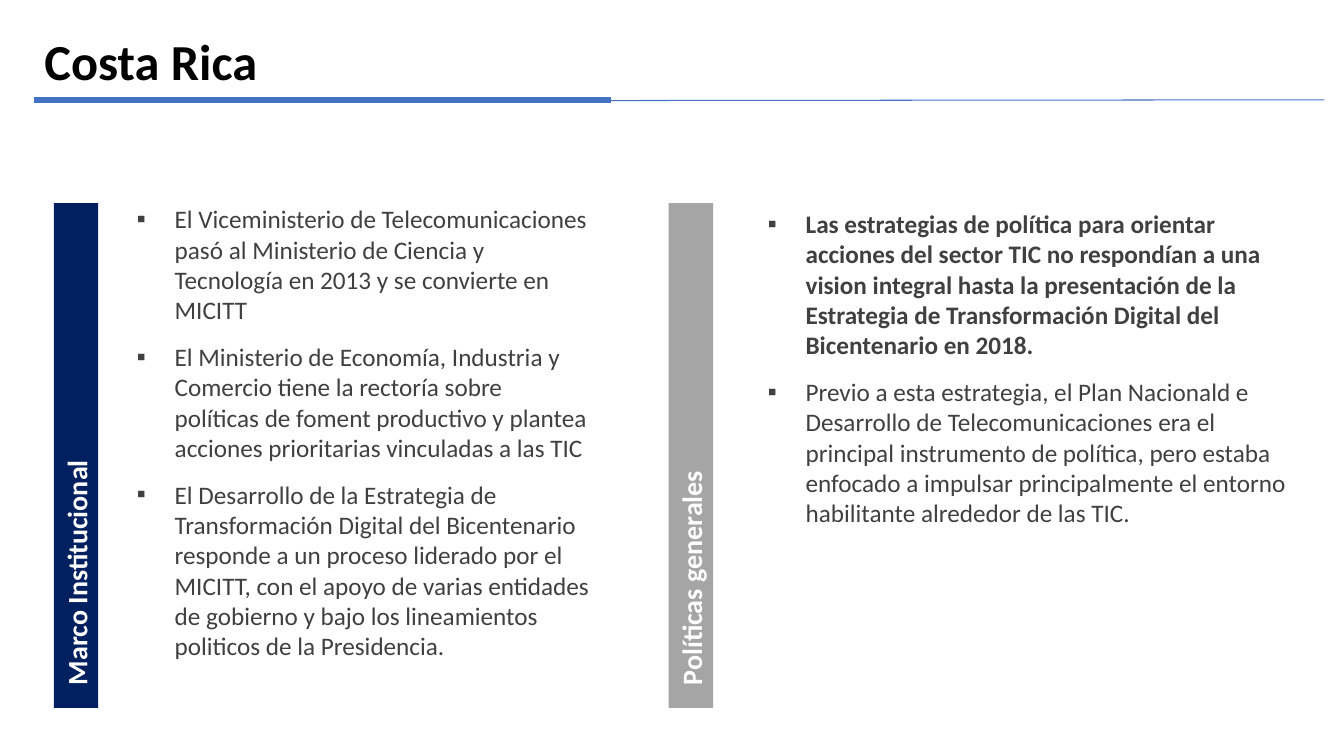
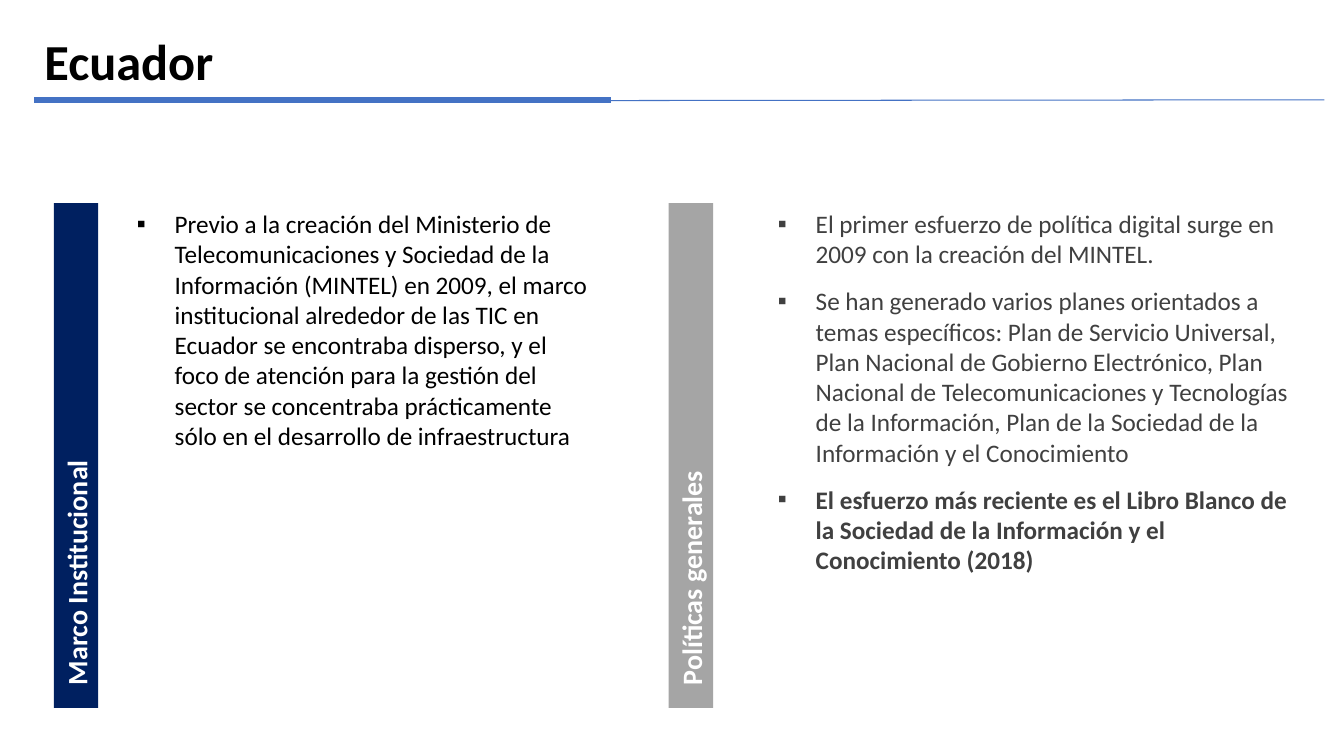
import pptx
import pptx.dml.color
import pptx.enum.shapes
import pptx.enum.text
import pptx.oxml
import pptx.oxml.ns
import pptx.util

Pt = pptx.util.Pt
RGBColor = pptx.dml.color.RGBColor
Anchor = pptx.enum.text.MSO_ANCHOR
Align = pptx.enum.text.PP_ALIGN

NAVY = RGBColor(0x00, 0x20, 0x60)
GREY = RGBColor(0xA5, 0xA5, 0xA5)
BLUE = RGBColor(0x44, 0x72, 0xC4)
DARK = RGBColor(0x40, 0x40, 0x40)
BLACK = RGBColor(0x00, 0x00, 0x00)
WHITE = RGBColor(0xFF, 0xFF, 0xFF)

TITLE_ONLY = 5


class CountryDeck:
    """Holds the shared style and the slide being filled."""

    font = "Calibri"
    title_format = {"size": Pt(36), "bold": True}
    label_format = {"size": Pt(20), "bold": True}
    body_format = {"size": Pt(18)}
    hanging = Pt(27)
    band_length, band_width, band_top = 360.7, 31.7, 145

    def __init__(self):
        self.deck = pptx.Presentation()
        self.deck.slide_width = Pt(960)
        self.deck.slide_height = Pt(540)
        self.slide = None

    def add_span(self, para, text, style, color):
        span = para.add_run()
        span.text = text
        span.font.name = self.font
        for name, value in style.items():
            setattr(span.font, name, value)
        span.font.color.rgb = color

    def add_line(self, start, end, weight):
        line = self.slide.shapes.add_connector(
            pptx.enum.shapes.MSO_CONNECTOR.STRAIGHT,
            *(Pt(value) for value in (*start, *end)))
        line.line.color.rgb = BLUE
        line.line.width = Pt(weight)
        line._element.spPr.append(pptx.oxml.parse_xml(
            "<a:effectLst %s/>" % pptx.oxml.ns.nsdecls("a")))

    def add_slide(self, title):
        """Start a slide with its title and the double rule below it."""
        layout = self.deck.slide_layouts[TITLE_ONLY]
        self.slide = self.deck.slides.add_slide(layout)
        box = self.slide.shapes.title
        place = {"left": 24.5, "top": 14.4, "width": 911.5, "height": 56.9}
        for name, value in place.items():
            setattr(box, name, Pt(value))
        frame = box.text_frame
        frame.auto_size = pptx.enum.text.MSO_AUTO_SIZE.NONE
        frame.vertical_anchor = Anchor.MIDDLE
        para = frame.paragraphs[0]
        para.alignment = Align.LEFT
        self.add_span(para, title, self.title_format, BLACK)
        self.add_line((24.5, 71.6), (436.3, 71.6), 4.5)
        self.add_line((260, 72), (946, 71.3), 0.75)

    def add_band(self, left, label, fill):
        """Vertical band whose label reads upwards from its foot."""
        shift = (self.band_length - self.band_width) / 2
        band = self.slide.shapes.add_shape(
            pptx.enum.shapes.MSO_SHAPE.RECTANGLE,
            Pt(left - shift), Pt(self.band_top + shift),
            Pt(self.band_length), Pt(self.band_width))
        band.rotation = 270
        band.shadow.inherit = False
        band.fill.solid()
        band.fill.fore_color.rgb = fill
        band.line.fill.background()
        frame = band.text_frame
        frame.margin_left = Pt(16.2)
        frame.vertical_anchor = Anchor.MIDDLE
        para = frame.paragraphs[0]
        para.alignment = Align.LEFT
        self.add_span(para, label, self.label_format, WHITE)

    def add_bullets(self, place, items, color=DARK):
        """Bulleted text; each item is a (text, bold) pair."""
        box = self.slide.shapes.add_textbox(*(Pt(value) for value in place))
        frame = box.text_frame
        frame.word_wrap = True
        frame.vertical_anchor = Anchor.TOP
        for index, (text, bold) in enumerate(items):
            para = frame.add_paragraph() if index else frame.paragraphs[0]
            para.space_after = Pt(12)
            self.add_span(para, text, {**self.body_format, "bold": bold}, color)
            props = para._p.get_or_add_pPr()
            props.set("marL", str(int(self.hanging)))
            props.set("indent", str(-int(self.hanging)))
            for tag, name, value in (("buFont", "typeface", self.font),
                                     ("buChar", "char", "▪")):
                props.append(pptx.oxml.parse_xml('<a:%s %s %s="%s"/>' % (
                    tag, pptx.oxml.ns.nsdecls("a"), name, value)))

    def add_country(self, name, institutions, policies):
        """One country: institutions on the left, policies on the right."""
        self.add_slide(name)
        self.add_band(38.5, "Marco Institucional", NAVY)
        self.add_bullets(**institutions)
        self.add_band(477.7, "Políticas generales", GREY)
        self.add_bullets(**policies)


def main():
    country_deck = CountryDeck()

    # Costa Rica
    country_deck.add_country(
        "Costa Rica",
        {"place": (90.7, 142, 338.4, 368), "items": [
            ("El Viceministerio de Telecomunicaciones pasó al Ministerio de "
             "Ciencia y Tecnología en 2013 y se convierte en MICITT", False),
            ("El Ministerio de Economía, Industria y Comercio tiene la "
             "rectoría sobre políticas de foment productivo y plantea "
             "acciones prioritarias vinculadas a las TIC", False),
            ("El Desarrollo de la Estrategia de Transformación Digital del "
             "Bicentenario responde a un proceso liderado por el MICITT, con "
             "el apoyo de varias entidades de gobierno y bajo los "
             "lineamientos politicos de la Presidencia.", False)]},
        {"place": (541.4, 145.4, 386.6, 303), "items": [
            ("Las estrategias de política para orientar acciones del sector "
             "TIC no respondían a una vision integral hasta la presentación "
             "de la Estrategia de Transformación Digital del Bicentenario "
             "en 2018.", True),
            ("Previo a esta estrategia, el Plan Nacionald e Desarrollo de "
             "Telecomunicaciones era el principal instrumento de política, "
             "pero estaba enfocado a impulsar principalmente el entorno "
             "habilitante alrededor de las TIC.", False)]})

    # Ecuador
    country_deck.add_country(
        "Ecuador",
        {"place": (90.7, 145.4, 338.4, 181.4), "color": BLACK, "items": [
            ("Previo a la creación del Ministerio de Telecomunicaciones y "
             "Sociedad de la Información (MINTEL) en 2009, el marco "
             "institucional alrededor de las TIC en Ecuador se encontraba "
             "disperso, y el foco de atención para la gestión del sector se "
             "concentraba prácticamente sólo en el desarrollo de "
             "infraestructura", False)]},
        {"place": (548.6, 145.4, 386.6, 303), "items": [
            ("El primer esfuerzo de política digital surge en 2009 con la "
             "creación del MINTEL.", False),
            ("Se han generado varios planes orientados a temas específicos: "
             "Plan de Servicio Universal, Plan Nacional de Gobierno "
             "Electrónico, Plan Nacional de Telecomunicaciones y Tecnologías "
             "de la Información, Plan de la Sociedad de la Información y el "
             "Conocimiento", False),
            ("El esfuerzo más reciente es el Libro Blanco de la Sociedad de "
             "la Información y el Conocimiento (2018)", True)]})

    country_deck.deck.save("out.pptx")


if __name__ == "__main__":
    main()
